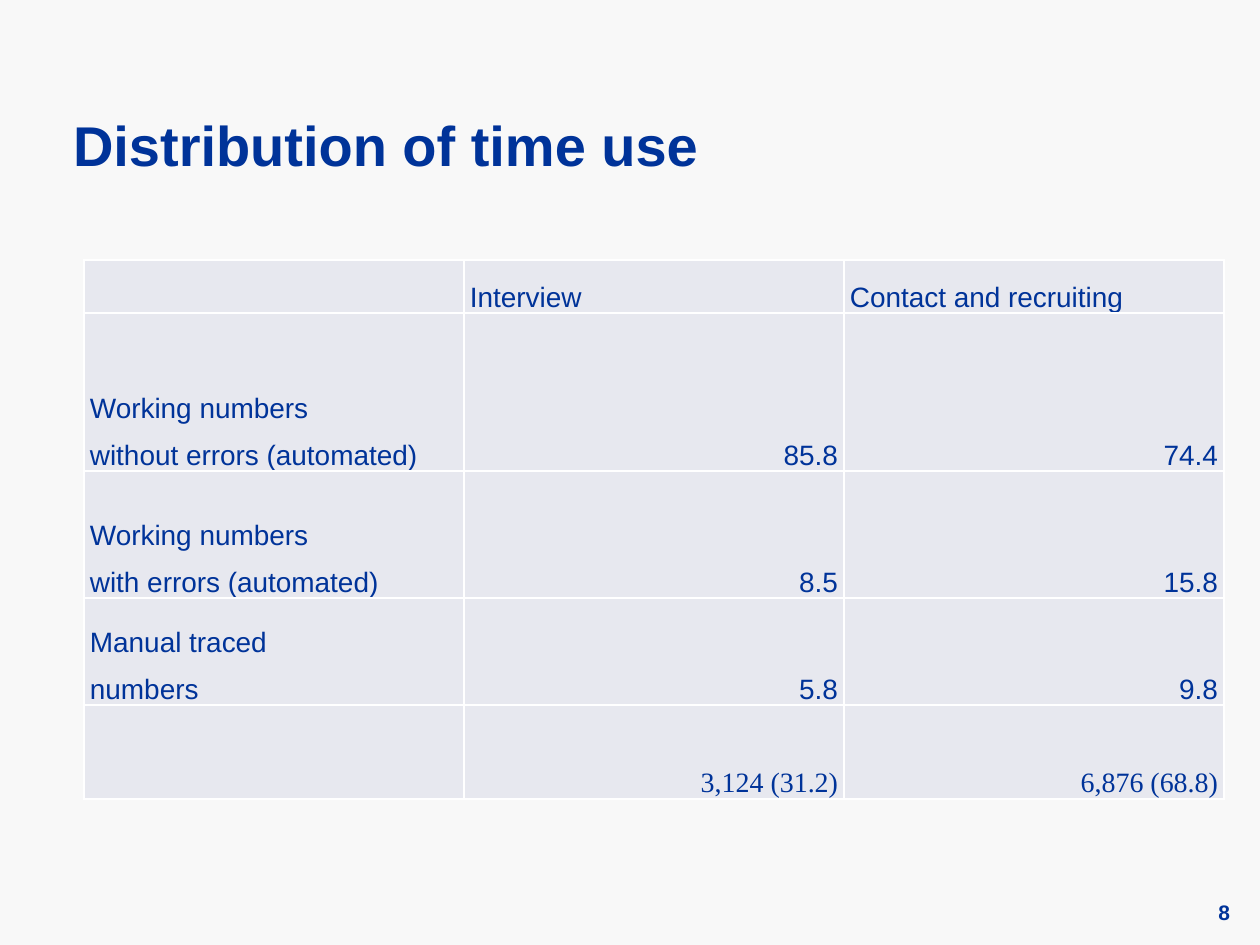
from lxml import etree
from pptx import Presentation, util as u
from pptx.dml.color import RGBColor
from pptx.enum import text
from pptx.oxml.ns import qn

PX = 914400 // 126
NAVY, PALE, WHITE, PAPER = "003399", "E7E8EF", "FFFFFF", "F8F8F8"
RIGHT, LEFT = text.PP_ALIGN.RIGHT, text.PP_ALIGN.LEFT
TOP, MIDDLE, BOTTOM = (text.MSO_ANCHOR.TOP, text.MSO_ANCHOR.MIDDLE,
                       text.MSO_ANCHOR.BOTTOM)
ROWS = [
    ("", "Interview", "Contact and recruiting"),
    ("Working numbers\vwithout errors (automated)", "85.8", "74.4"),
    ("Working numbers\vwith errors (automated)", "8.5", "15.8"),
    ("Manual traced\vnumbers", "5.8", "9.8"),
    ("", "3,124 (31.2)", "6,876 (68.8)"),
]
HEIGHTS = [53, 158, 127, 107, 94]


def px(n):
    """Turn whole px into EMU."""
    return u.Emu(n * PX)


def paint(fill, tone):
    """Give a fill one solid colour from a hex string."""
    fill.solid()
    fill.fore_color.rgb = RGBColor.from_string(tone)


def write(para, words, size, face="Arial", bold=False, align=LEFT):
    """Put navy words into a paragraph."""
    para.text = words
    para.alignment = align
    font = para.font
    font.size, font.name, font.bold = u.Pt(size), face, bold
    paint(font.fill, NAVY)


def label(slide, box, words, size, align=LEFT, anchor=TOP, drop=0):
    """Add a bold text box, its first line lowered by drop px."""
    frame = slide.shapes.add_textbox(*map(px, box)).text_frame
    frame.word_wrap = True
    frame.vertical_anchor = anchor
    frame.margin_left = frame.margin_right = frame.margin_bottom = 0
    frame.margin_top = px(drop)
    write(frame.paragraphs[0], words, size, bold=True, align=align)


def edge(cell):
    """Draw thin white borders round a cell."""
    props = cell._tc.get_or_add_tcPr()
    for spot, side in enumerate(("a:lnL", "a:lnR", "a:lnT", "a:lnB")):
        line = etree.Element(qn(side), w=str(u.Pt(1)))
        fill = etree.SubElement(line, qn("a:solidFill"))
        etree.SubElement(fill, qn("a:srgbClr"), val=WHITE)
        props.insert(spot, line)


def grid(slide, box):
    """Add the table of time shares in equal columns."""
    table = slide.shapes.add_table(len(ROWS), len(ROWS[0]), *map(px, box)).table
    table.first_row = table.horz_banding = False
    for col in table.columns:
        col.width = px(box[2] // len(ROWS[0]))
    for r, (row, high) in enumerate(zip(ROWS, HEIGHTS)):
        table.rows[r].height = px(high)
        face = "Times New Roman" if r == len(ROWS) - 1 else "Arial"
        for c, words in enumerate(row):
            cell = table.cell(r, c)
            cell.margin_left = cell.margin_right = px(6)
            cell.margin_top = cell.margin_bottom = 0
            cell.vertical_anchor = BOTTOM
            paint(cell.fill, PALE)
            edge(cell)
            if words:
                para = cell.text_frame.paragraphs[0]
                para.line_spacing = 1.5
                write(para, words, 16, face, align=RIGHT if r and c else LEFT)


def main():
    """Build and save the slide."""
    deck = Presentation()
    deck.slide_width, deck.slide_height = px(1260), px(945)
    slide = deck.slides.add_slide(deck.slide_layouts[6])
    paint(slide.background.fill, PAPER)
    label(slide, (73, 105, 1155, 116), "Distribution of time use", 32, drop=6)
    grid(slide, (84, 260, 1140, sum(HEIGHTS)))
    label(slide, (1166, 896, 64, 33), "8", 12, RIGHT, MIDDLE)
    deck.save("out.pptx")


if __name__ == "__main__":
    main()
